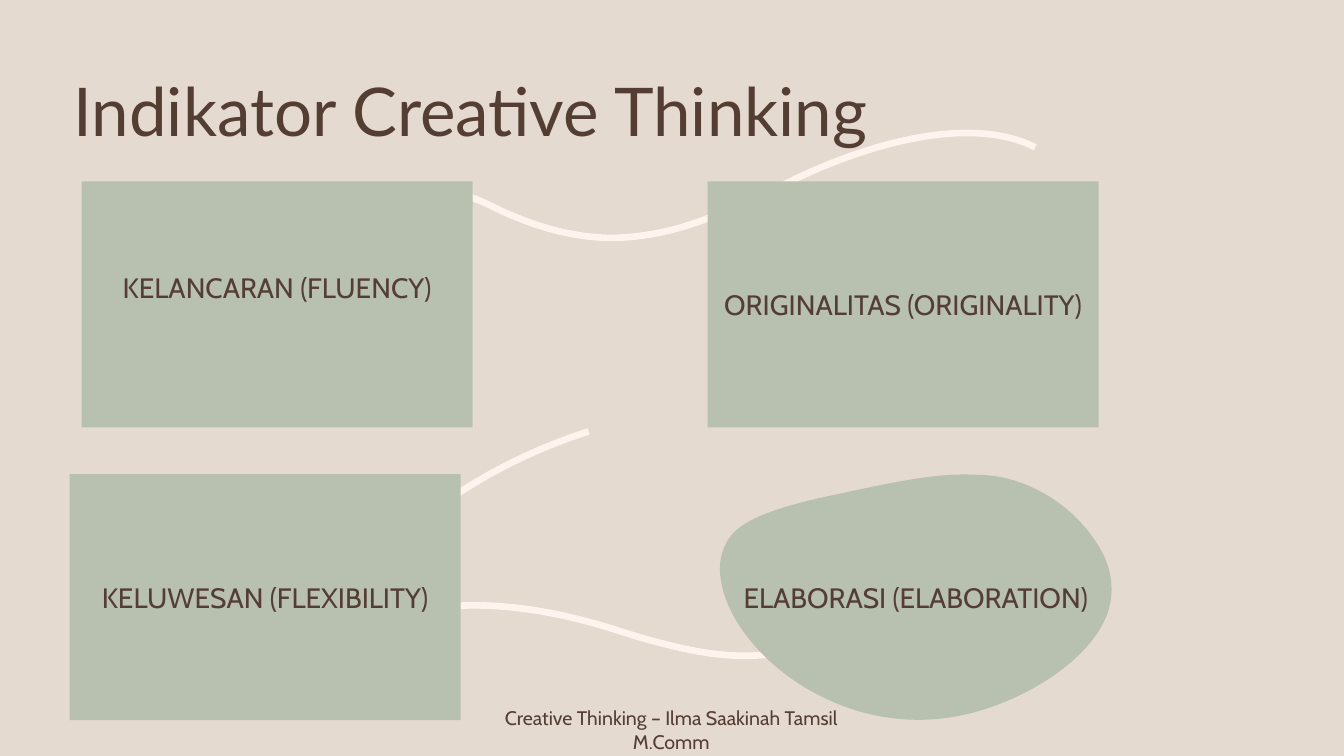
from pptx import Presentation
from pptx.dml.color import RGBColor
from pptx.enum.text import MSO_ANCHOR, MSO_AUTO_SIZE, PP_ALIGN
from pptx.oxml.ns import qn
from pptx.util import Inches, Pt
from lxml.etree import SubElement

SAND = RGBColor(0xE5, 0xDA, 0xCF)
SAGE = RGBColor(0xB8, 0xC0, 0xB0)
CREAM = RGBColor(0xFE, 0xF3, 0xED)
BROWN = RGBColor(0x54, 0x3E, 0x34)

CELL = Inches(0.1)  # the slide is a grid of square cells
COLS, ROWS = 133.33, 75
BOX_COLS, BOX_ROWS = 38.8, 24.4
STEPS = 16

BOXES = [
    # text, column, row, rows of extra bottom inset
    ("KELANCARAN (FLUENCY)", 8.1, 18, 3.4),
    ("ORIGINALITAS (ORIGINALITY)", 70.2, 18, 0),
    ("KELUWESAN (FLEXIBILITY)", 6.9, 47.04, 0),
]

# Each outline: a start point, then cubic segments of two handles and an end
WAVES = [
    [(58.4, 42.8), (50.9, 45.2), (44.5, 49), (38.9, 53.9)],
    [(30.7, 22.3), (35, 18.7), (39.8, 17.7), (44.9, 19),
     (46.6, 19.4), (48.1, 20.1), (49.7, 20.9),
     (53, 22.4), (56.5, 23.5), (60.4, 23.6),
     (63.7, 23.6), (67, 22.9), (70.1, 21.7),
     (73.7, 20.3), (75.7, 19.3), (77.8, 18.3),
     (80.1, 17.1), (94, 10.3), (102.7, 14.6)],
    [(92, 57.9), (90.4, 58.6), (89.1, 59.5), (87.7, 60.5),
     (84.8, 62.5), (81.5, 64.1), (77.8, 64.7),
     (74.6, 65.3), (71.4, 65.1), (68.1, 64.4),
     (64.5, 63.6), (62.4, 62.9), (60.2, 62.2),
     (57.8, 61.5), (43.4, 57), (34.7, 63.6)],
]
PEBBLE = [
    (96.6, 47.1), (99, 47.1), (101, 47.6), (103.1, 48.7),
    (105.8, 50.1), (107.5, 52), (108.4, 53.3),
    (109.3, 54.5), (110.6, 56.7), (110.2, 59.5),
    (109.5, 64.7), (102.1, 69.5), (95.7, 70.9),
    (84.3, 73.5), (73.9, 65.8), (71.8, 58.8),
    (71.5, 57.7), (71, 55.7), (72.1, 53.8),
    (72.9, 52.3), (74.8, 50.8), (82.3, 49.2),
    (88.3, 47.9), (92.8, 46.9), (96.6, 47.1),
]


def cells(n):
    return round(n * CELL)


def curve_points(outline):
    """Sample a chain of cubic segments, to find the frame that holds it."""
    points = [outline[0]]
    for i in range(0, len(outline) - 1, 3):
        segment = outline[i:i + 4]
        for step in range(1, STEPS + 1):
            t = step / STEPS
            weights = ((1 - t) ** 3, 3 * t * (1 - t) ** 2,
                       3 * t * t * (1 - t), t ** 3)
            points.append(tuple(sum(w * pt[axis] for w, pt in zip(weights, segment))
                                for axis in (0, 1)))
    return [(cells(x), cells(y)) for x, y in points]


def bend(sp, outline):
    """Replace the straight segments of a freeform with cubic ones."""
    path_el = next(sp._element.iter(qn("a:path")))
    for line in path_el.findall(qn("a:lnTo")):
        path_el.remove(line)
    for i in range(1, len(outline), 3):
        curve = SubElement(path_el, qn("a:cubicBezTo"))
        for x, y in outline[i:i + 3]:
            SubElement(curve, qn("a:pt"), x=str(cells(x) - sp.left),
                       y=str(cells(y) - sp.top))
    for close in path_el.findall(qn("a:close")):
        path_el.append(close)


def write(sp, text, size=20, font="Cabin", align=PP_ALIGN.CENTER, spacing=1.0, lift=0):
    tf = sp.text_frame
    tf.text = text
    tf.word_wrap = True
    tf.auto_size = MSO_AUTO_SIZE.NONE
    tf.vertical_anchor = MSO_ANCHOR.MIDDLE
    tf.margin_bottom = Inches(0.05) + cells(lift)
    p = tf.paragraphs[0]
    p.alignment = align
    p.line_spacing = spacing
    p.space_before = p.space_after = Pt(0)
    pPr = p._p.get_or_add_pPr()
    pPr.set("marL", "0")
    pPr.set("indent", "0")
    SubElement(pPr, qn("a:buNone"))
    r = p.runs[0]
    r.font.name = font
    r.font.size = Pt(size)
    r.font.bold = False
    r.font.color.rgb = BROWN


class IndicatorSlide:
    def __init__(self, prs):
        layout = prs.slide_layouts.get_by_name("Comparison")
        self.slide = prs.slides.add_slide(layout)
        self.shapes = self.slide.shapes
        self.bodies = [sp for sp in self.slide.placeholders
                       if sp.placeholder_format.idx > 0]
        fill = self.slide.background.fill
        fill.solid()
        fill.fore_color.rgb = SAND

    def place(self, sp, col, row, cols, rows):
        sp.left, sp.top = cells(col), cells(row)
        sp.width, sp.height = cells(cols), cells(rows)

    def title(self, text):
        sp = self.shapes.title
        self.place(sp, 6.3, 7.7, 100, 7.4)
        write(sp, text, size=48, font="Lato", align=PP_ALIGN.LEFT, spacing=0.9)

    def box(self, text, col, row, lift):
        sp = self.bodies.pop(0)
        self.place(sp, col, row, BOX_COLS, BOX_ROWS)
        sp.fill.solid()
        sp.fill.fore_color.rgb = SAGE
        write(sp, text, lift=lift)

    def outline(self, outline, close):
        points = curve_points(outline)
        builder = self.shapes.build_freeform(*points[0], scale=1.0)
        builder.add_line_segments(points[1:], close=close)
        sp = builder.convert_to_shape()
        sp.shadow.inherit = False
        bend(sp, outline)
        return sp

    def wave(self, outline, depth):
        sp = self.outline(outline, close=False)
        sp.fill.background()
        sp.line.color.rgb = CREAM
        sp.line.width = Pt(4.75)
        self.shapes._spTree.insert(2 + depth, sp._element)

    def pebble(self, text, outline):
        sp = self.outline(outline, close=True)
        sp.fill.solid()
        sp.fill.fore_color.rgb = SAGE
        sp.line.fill.background()
        write(sp, text)

    def footer(self, text):
        sp = self.shapes.add_textbox(cells(46.4), cells(70.7), cells(40.4), cells(3.4))
        write(sp, text, size=14)

    def drop_unused(self):
        for sp in self.bodies:
            sp._element.getparent().remove(sp._element)


def main():
    prs = Presentation()
    prs.slide_width, prs.slide_height = cells(COLS), cells(ROWS)
    s = IndicatorSlide(prs)
    for depth, wave in enumerate(WAVES):
        s.wave(wave, depth)
    s.title("Indikator Creative Thinking")
    for box in BOXES:
        s.box(*box)
    s.pebble("ELABORASI (ELABORATION)", PEBBLE)
    s.footer("Creative Thinking – Ilma Saakinah Tamsil M.Comm")
    s.drop_unused()
    prs.save("out.pptx")


if __name__ == "__main__":
    main()
